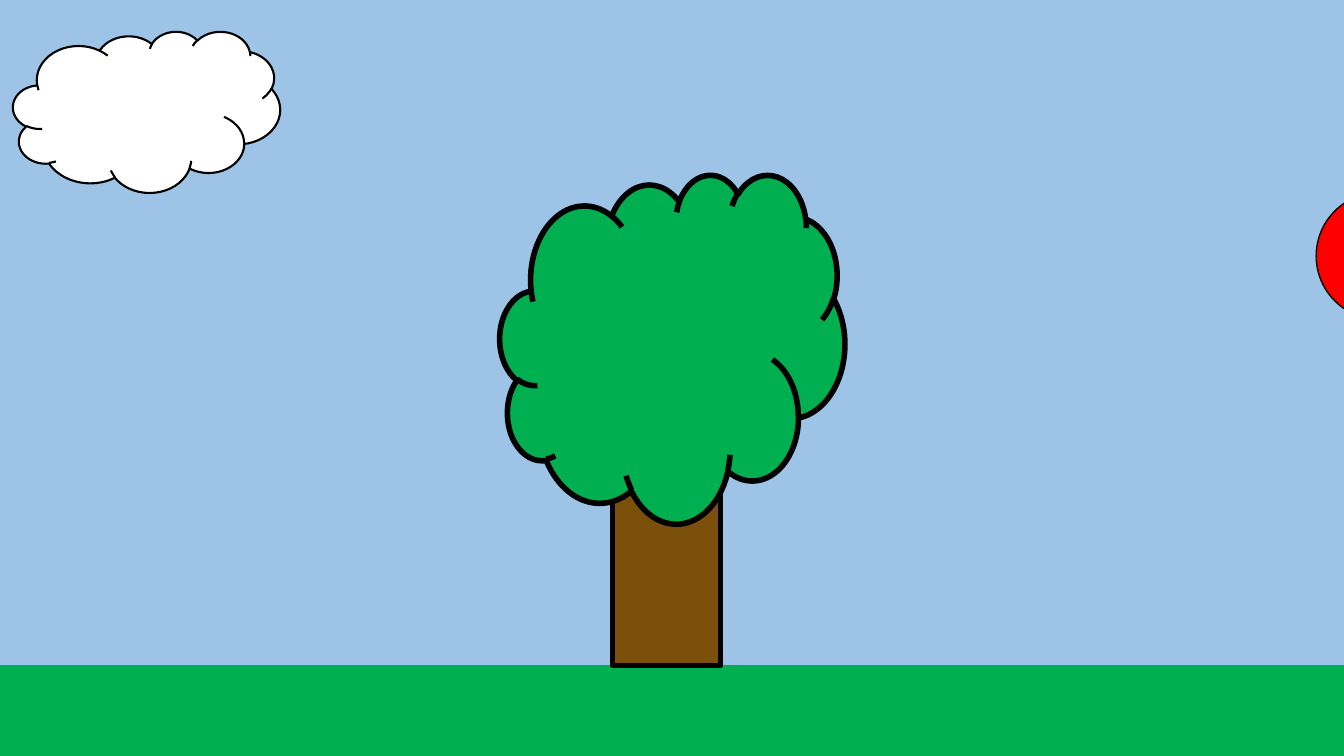
from dataclasses import dataclass

import pptx
import pptx.dml.color
import pptx.enum.shapes
import pptx.oxml.ns
import pptx.oxml.xmlchemy
import pptx.shapes.shapetree
import pptx.util
from lxml import etree
from pptx.enum.shapes import MSO_CONNECTOR, MSO_SHAPE
from pptx.util import Cm

SLIDE_WIDTH, SLIDE_HEIGHT = 33.87, 19.05

COLOURS = {
    "sky": "9DC3E6",
    "grass": "00B050",
    "bark": "7B500B",
    "cloud": "FFFFFF",
    "ball": "FF0000",
    "outline": "000000",
}


@dataclass(frozen=True)
class GroundBand:
    """A full-width stripe: centre height in cm, thickness in points."""
    y: float
    thickness: float


@dataclass(frozen=True)
class SceneryPart:
    """An outlined shape: lengths in cm, outline in points."""
    geometry: MSO_SHAPE
    left: float
    top: float
    width: float
    height: float
    colour: str
    outline: float


GROUND = [GroundBand(16.76, 0.5), GroundBand(17.93, 67)]

SCENERY = [
    SceneryPart(MSO_SHAPE.RECTANGLE, 15.44, 10.85, 2.72, 5.92, "bark", 4),
    SceneryPart(MSO_SHAPE.CLOUD, 12.6, 4.39, 8.69, 8.79, "grass", 4),
    SceneryPart(MSO_SHAPE.OVAL, 33.17, 4.85, 3.2, 3.2, "ball", 1),
    SceneryPart(MSO_SHAPE.CLOUD, 0.33, 0.79, 6.73, 4.06, "cloud", 1.5),
]


def rgb(name: str) -> pptx.dml.color.RGBColor:
    return pptx.dml.color.RGBColor.from_string(COLOURS[name])


def draw_ground(shapes: pptx.shapes.shapetree.SlideShapes, band: GroundBand) -> None:
    stripe = shapes.add_connector(
        MSO_CONNECTOR.STRAIGHT, 0, Cm(band.y), Cm(SLIDE_WIDTH), Cm(band.y)
    )
    stripe.line.color.rgb = rgb("grass")
    stripe.line.width = pptx.util.Pt(band.thickness)
    etree.SubElement(stripe._element.spPr, pptx.oxml.ns.qn("a:effectLst"))


def draw_scenery(shapes: pptx.shapes.shapetree.SlideShapes, part: SceneryPart) -> None:
    drawn = shapes.add_shape(
        part.geometry, Cm(part.left), Cm(part.top), Cm(part.width), Cm(part.height)
    )
    drawn.shadow.inherit = False
    drawn.fill.solid()
    drawn.fill.fore_color.rgb = rgb(part.colour)
    drawn.line.color.rgb = rgb("outline")
    drawn.line.width = pptx.util.Pt(part.outline)


def main() -> None:
    presentation = pptx.Presentation()
    presentation.slide_width = Cm(SLIDE_WIDTH)
    presentation.slide_height = Cm(SLIDE_HEIGHT)
    slide = presentation.slides.add_slide(presentation.slide_layouts[6])

    sky = slide.background.fill
    sky.solid()
    sky.fore_color.rgb = rgb("sky")

    for band in GROUND:
        draw_ground(slide.shapes, band)
    for part in SCENERY:
        draw_scenery(slide.shapes, part)

    presentation.save("out.pptx")


if __name__ == "__main__":
    main()
